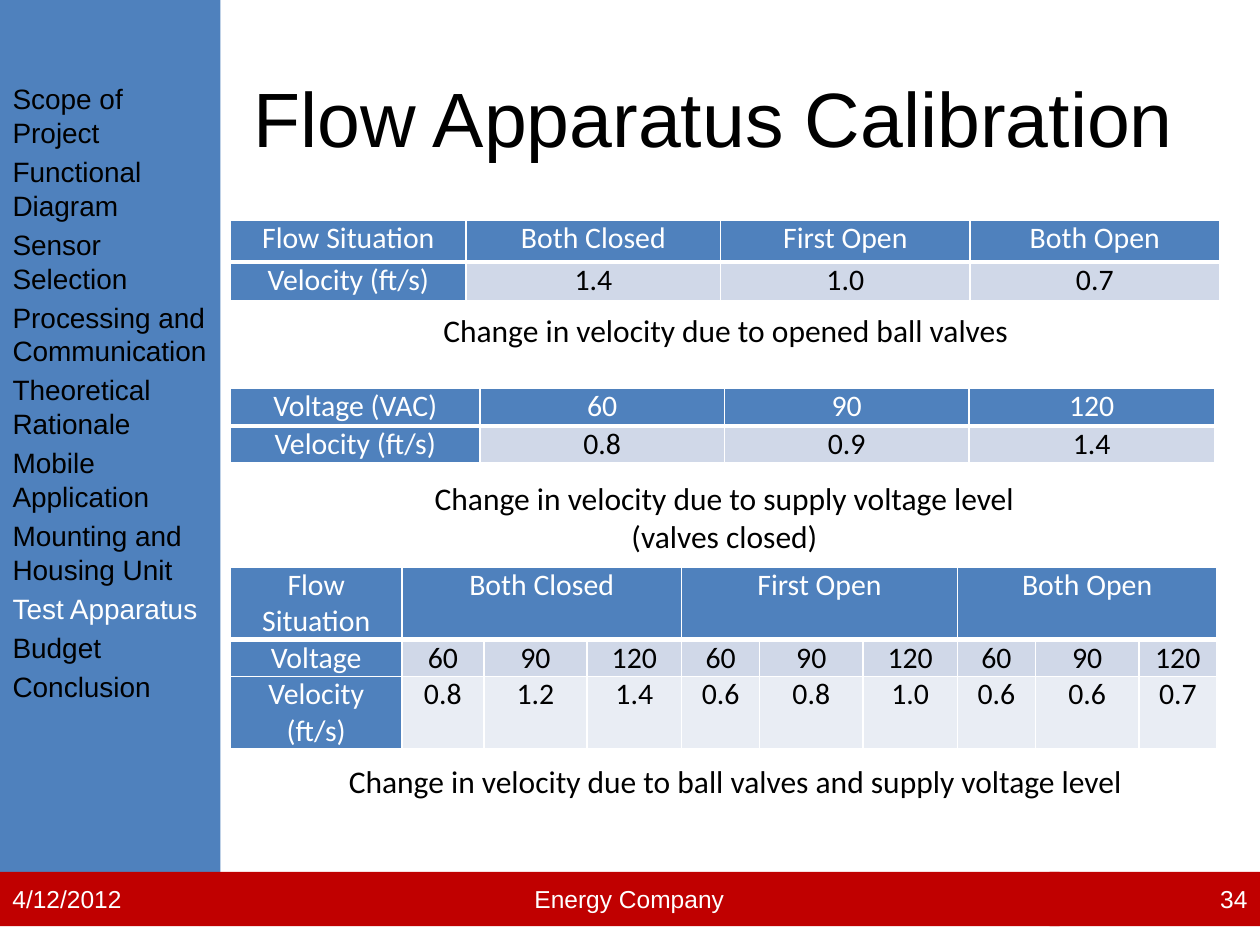
from lxml.etree import SubElement
from pptx import Presentation
from pptx.dml.color import RGBColor
from pptx.enum.shapes import MSO_SHAPE as Shape
from pptx.enum.text import MSO_ANCHOR as Anchor, MSO_AUTO_SIZE as AutoSize, PP_ALIGN as Align
from pptx.oxml.ns import qn
from pptx.util import Inches, Pt

BLUE, RED, WHITE, BLACK = "4F81BD", "C00000", "FFFFFF", "000000"
BANDS = ["D0D8E8", "E9EDF4"]

SECTIONS = [
    "Scope of Project", "Functional Diagram", "Sensor Selection",
    "Processing and Communication", "Theoretical Rationale",
    "Mobile Application", "Mounting and Housing Unit", "Test Apparatus",
    "Budget", "Conclusion",
]
CURRENT_SECTION = "Test Apparatus"
VALVES = ["Both Closed", "First Open", "Both Open"]
VOLTAGES = ["60", "90", "120"]


def color(value):
    return RGBColor.from_string(value)


class CalibrationSlide:
    heading_font = "Arial"
    table_font = "Calibri"

    def __init__(self, deck):
        self.page = deck.slides.add_slide(deck.slide_layouts[1])

    def place(self, item, left, top, width, height):
        item.left, item.top = Inches(left), Inches(top)
        item.width, item.height = Inches(width), Inches(height)

    def style(self, para, font, size, ink, align=Align.LEFT):
        para.alignment = align
        for span in para.runs:
            span.font.name = font
            span.font.size = Pt(size)
            span.font.bold = False
            span.font.color.rgb = color(ink)

    def title(self, text, *bounds):
        box = self.page.shapes.title
        self.place(box, *bounds)
        frame = box.text_frame
        frame.text = text
        frame.auto_size = AutoSize.NONE
        frame.vertical_anchor = Anchor.MIDDLE
        self.style(frame.paragraphs[0], self.heading_font, 44, BLACK, Align.CENTER)

    def sidebar(self, sections, current, *bounds):
        box = self.page.placeholders[1]
        self.place(box, *bounds)
        box.fill.solid()
        box.fill.fore_color.rgb = color(BLUE)
        frame = box.text_frame
        frame.text = "\n".join(sections)
        frame.auto_size = AutoSize.NONE
        frame.margin_top = Inches(0.65)
        for para in frame.paragraphs:
            ink = WHITE if para.text == current else BLACK
            self.style(para, self.heading_font, 16, ink)
            para.space_before = Pt(3.2)
            properties = para._p.get_or_add_pPr()
            properties.set("marL", "0")
            properties.set("indent", "0")
            SubElement(properties, qn("a:buNone"))

    def footer(self, text, align, *bounds):
        box = self.page.shapes.add_shape(Shape.RECTANGLE, *map(Inches, bounds))
        box.shadow.inherit = False
        box.fill.solid()
        box.fill.fore_color.rgb = color(RED)
        box.line.fill.background()
        box.text_frame.text = text
        box.text_frame.vertical_anchor = Anchor.MIDDLE
        self.style(box.text_frame.paragraphs[0], self.heading_font, 14, WHITE, align)

    def caption(self, text, align, *bounds):
        box = self.page.shapes.add_textbox(*map(Inches, bounds))
        box.text_frame.word_wrap = True
        box.text_frame.text = text
        self.style(box.text_frame.paragraphs[0], self.table_font, 18, BLACK, align)

    def cell(self, cell, text, fill, ink, bottom):
        properties = cell._tc.get_or_add_tcPr()
        for side, points in (("L", 1), ("R", 1), ("T", 1), ("B", bottom)):
            line = SubElement(properties, qn(f"a:ln{side}"), w=str(Pt(points)))
            paint = SubElement(line, qn("a:solidFill"))
            SubElement(paint, qn("a:srgbClr"), val=WHITE)
        cell.fill.solid()
        cell.fill.fore_color.rgb = color(fill)
        cell.margin_left = cell.margin_right = Inches(0.11)
        cell.margin_top = cell.margin_bottom = 0
        cell.text = text
        self.style(cell.text_frame.paragraphs[0], self.table_font, 17, ink, Align.CENTER)

    def table(self, top, widths, heights, rows, group=1):
        frame = self.page.shapes.add_table(
            len(heights), len(widths), Inches(1.83), Inches(top),
            Inches(sum(widths)), Inches(sum(heights)))
        table = frame.table
        for column, width in zip(table.columns, widths):
            column.width = Inches(width)
        for row, height in zip(table.rows, heights):
            row.height = Inches(height)
        for r, values in enumerate(rows):
            for c, text in enumerate(values):
                header = r == 0 or c == 0
                self.cell(table.cell(r, c), text,
                          BLUE if header else BANDS[r - 1],
                          WHITE if header else BLACK,
                          3 if r == 0 else 1)
        if group > 1:
            for start in range(1, len(widths), group):
                table.cell(0, start).merge(table.cell(0, start + group - 1))


def main():
    deck = Presentation()
    deck.slide_width, deck.slide_height = Inches(10), Inches(7.5)
    slide = CalibrationSlide(deck)

    slide.title("Flow Apparatus Calibration", 1.75, 0.3, 7.83, 1.25)
    slide.sidebar(SECTIONS, CURRENT_SECTION, 0, 0, 1.75, 6.92)
    slide.footer("4/12/2012", Align.LEFT, 0, 6.92, 1.58, 0.43)
    slide.footer("Energy Company", Align.CENTER, 1.58, 6.92, 6.83, 0.43)
    slide.footer("34", Align.RIGHT, 8.33, 6.92, 1.67, 0.43)

    slide.table(1.75, [1.87, 2.02, 1.98, 1.98], [0.33, 0.31], [
        ["Flow Situation", *VALVES],
        ["Velocity (ft/s)", "1.4", "1.0", "0.7"],
    ])
    slide.table(3.08, [1.98, 1.94, 1.94, 1.95], [0.3, 0.28], [
        ["Voltage (VAC)", *VOLTAGES],
        ["Velocity (ft/s)", "0.8", "0.9", "1.4"],
    ])
    valve_headers = [text for valve in VALVES for text in (valve, "", "")]
    slide.table(
        4.5, [1.36, 0.65, 0.82, 0.75, 0.62, 0.82, 0.75, 0.62, 0.82, 0.62],
        [0.57, 0.29, 0.57], [
            ["Flow Situation", *valve_headers],
            ["Voltage", *VOLTAGES * len(VALVES)],
            ["Velocity (ft/s)", "0.8", "1.2", "1.4", "0.6", "0.8", "1.0",
             "0.6", "0.6", "0.7"],
        ], group=len(VOLTAGES))

    slide.caption("Change in velocity due to opened ball valves",
                  Align.LEFT, 3.42, 2.42, 5.25, 0.4)
    slide.caption("Change in velocity due to supply voltage level (valves closed)",
                  Align.CENTER, 3, 3.75, 5.5, 0.71)
    slide.caption("Change in velocity due to ball valves and supply voltage level",
                  Align.LEFT, 2.67, 6, 7.08, 0.4)
    deck.save("out.pptx")


if __name__ == "__main__":
    main()
